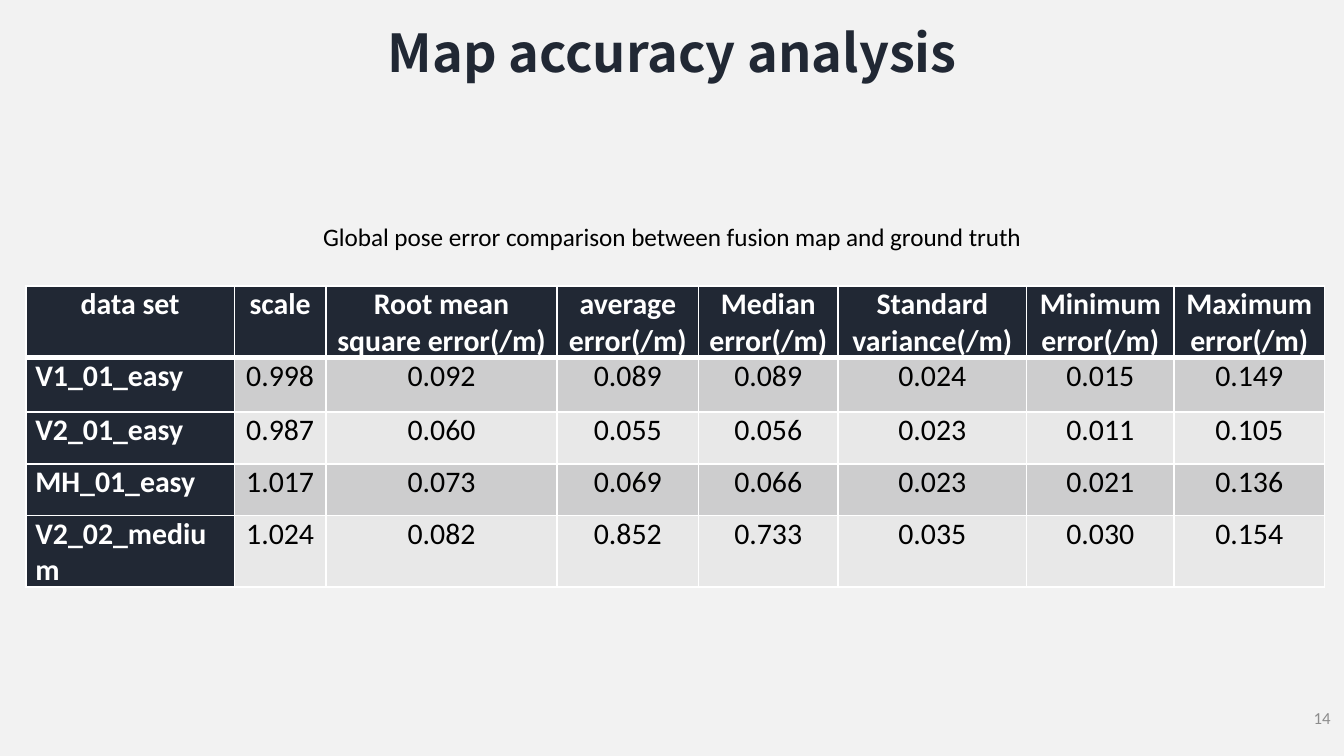
from lxml import etree
from pptx import Presentation
from pptx.dml.color import RGBColor
from pptx.enum.text import MSO_ANCHOR, PP_ALIGN
from pptx.oxml.ns import qn
from pptx.util import Cm, Pt

LEFT, CENTER, RIGHT = PP_ALIGN.LEFT, PP_ALIGN.CENTER, PP_ALIGN.RIGHT
TOP, MIDDLE = MSO_ANCHOR.TOP, MSO_ANCHOR.MIDDLE
BLANK_LAYOUT = 6
BODY_FONT, TITLE_FONT = "Calibri", "Noto Sans CJK SC"

COLORS = {
    "background": "F2F2F2",
    "navy": "212834",
    "dark band": "CDCDCE",
    "light band": "E8E8E8",
    "white": "FFFFFF",
    "black": "000000",
    "gray": "8C8C8C",
}

COLUMN_WIDTHS = [3.94, 1.73, 4.37, 2.67, 2.64, 3.56, 2.79, 2.84]
ROW_HEIGHTS = [1.27, 1.02, 0.99, 0.97, 0.97]
ERROR_ROWS = [
    ["data set", "scale", "Root mean square error(/m)", "average error(/m)",
     "Median error(/m)", "Standard variance(/m)", "Minimum error(/m)",
     "Maximum error(/m)"],
    ["V1_01_easy", "0.998", "0.092", "0.089", "0.089", "0.024", "0.015", "0.149"],
    ["V2_01_easy", "0.987", "0.060", "0.055", "0.056", "0.023", "0.011", "0.105"],
    ["MH_01_easy", "1.017", "0.073", "0.069", "0.066", "0.023", "0.021", "0.136"],
    ["V2_02_medium", "1.024", "0.082", "0.852", "0.733", "0.035", "0.030", "0.154"],
]


def color(name):
    return RGBColor.from_string(COLORS[name])


def write(frame, text, size, color_name, align, bold=False, font=BODY_FONT):
    """Put one formatted paragraph into a text frame."""
    frame.text = text
    paragraph = frame.paragraphs[0]
    paragraph.alignment = align
    for run in paragraph.runs:
        run.font.name = font
        run.font.size = Pt(size)
        run.font.bold = bold
        run.font.color.rgb = color(color_name)


def add_label(slide, box, text, size, color_name, align,
              anchor=MIDDLE, wrap=True, **style):
    label = slide.shapes.add_textbox(*(Cm(length) for length in box))
    frame = label.text_frame
    frame.word_wrap = wrap
    frame.vertical_anchor = anchor
    write(frame, text, size, color_name, align, **style)


def set_borders(cell, top=1, bottom=1):
    """Draw white cell borders; top and bottom are widths in points."""
    properties = cell._tc.get_or_add_tcPr()
    for side, width in (("L", 1), ("R", 1), ("T", top), ("B", bottom)):
        line = etree.SubElement(properties, qn(f"a:ln{side}"), w=str(Pt(width)))
        fill = etree.SubElement(line, qn("a:solidFill"))
        etree.SubElement(fill, qn("a:srgbClr"), val=COLORS["white"])


def format_cell(cell, text, row, column):
    is_heading = row == 0 or column == 0
    band = "dark band" if row % 2 else "light band"
    cell.margin_left = cell.margin_right = Cm(0.18)
    cell.margin_top = cell.margin_bottom = 0
    set_borders(cell, top=3 if row == 1 else 1, bottom=3 if row == 0 else 1)
    cell.fill.solid()
    cell.fill.fore_color.rgb = color("navy" if is_heading else band)
    write(cell.text_frame, text, 16, "white" if is_heading else "black",
          LEFT if row and column == 0 else CENTER, bold=is_heading)


def add_error_table(slide, left, top):
    table = slide.shapes.add_table(
        len(ROW_HEIGHTS), len(COLUMN_WIDTHS), Cm(left), Cm(top),
        Cm(sum(COLUMN_WIDTHS)), Cm(sum(ROW_HEIGHTS))).table
    for column, width in zip(table.columns, COLUMN_WIDTHS):
        column.width = Cm(width)
    for row, height in zip(table.rows, ROW_HEIGHTS):
        row.height = Cm(height)
    for r, values in enumerate(ERROR_ROWS):
        for c, value in enumerate(values):
            format_cell(table.cell(r, c), value, r, c)


def main():
    presentation = Presentation()
    presentation.slide_width = Cm(25.4)
    presentation.slide_height = Cm(14.29)
    slide = presentation.slides.add_slide(presentation.slide_layouts[BLANK_LAYOUT])
    slide.background.fill.solid()
    slide.background.fill.fore_color.rgb = color("background")

    add_label(slide, (19.69, 13.18, 5.71, 0.76), "14", 9, "gray", RIGHT)
    add_error_table(slide, 0.49, 5.41)
    add_label(slide, (2.05, 4.05, 21.3, 0.83),
              "Global pose error comparison between fusion map and ground truth",
              13.5, "black", CENTER)
    add_label(slide, (6.88, 0.25, 11.65, 1.45), "Map accuracy analysis", 28, "navy",
              CENTER, anchor=TOP, wrap=False, bold=True, font=TITLE_FONT)
    presentation.save("out.pptx")


if __name__ == "__main__":
    main()
